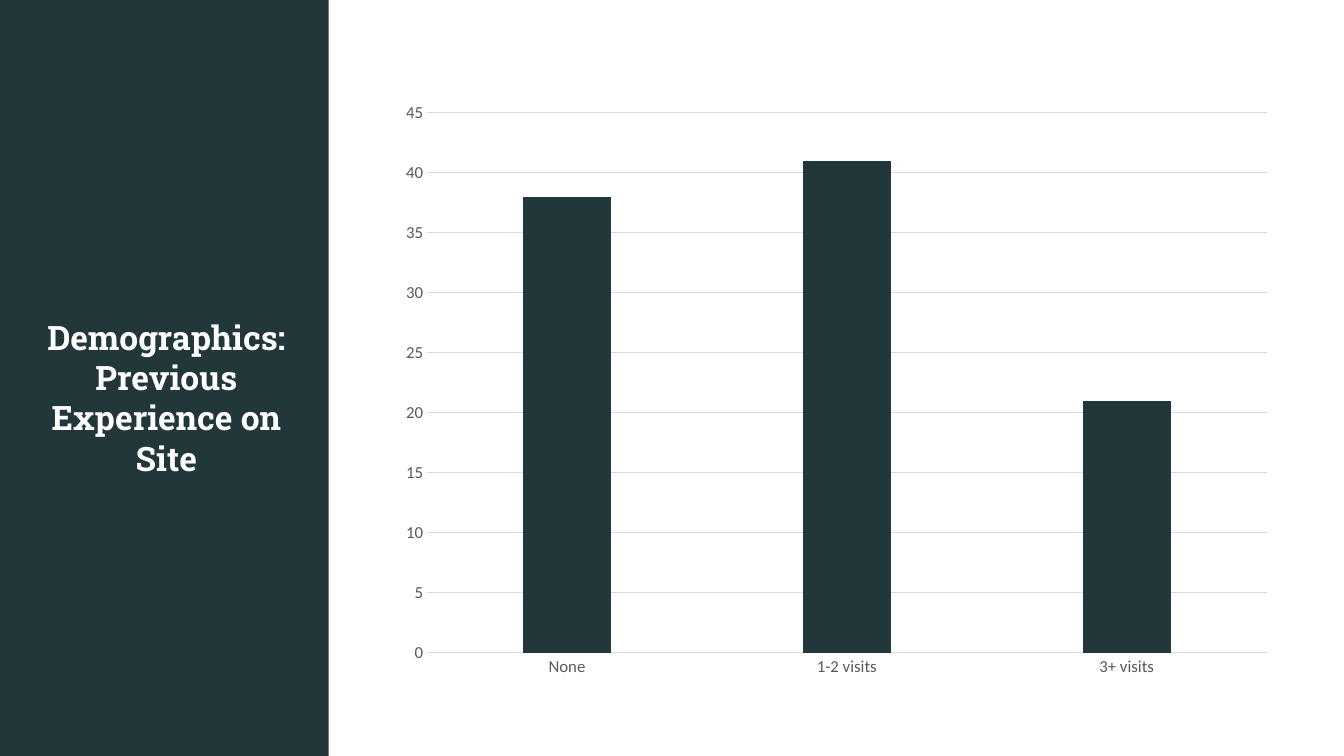
from pptx import Presentation
from pptx.chart.data import CategoryChartData as ChartData
from pptx.dml.color import RGBColor as Rgb
from pptx.enum.chart import XL_CHART_TYPE as Kind, XL_TICK_MARK as Tick
from pptx.enum.shapes import MSO_SHAPE as Shape
from pptx.enum.text import MSO_ANCHOR as Anchor, PP_ALIGN as Align
from pptx.util import Inches, Pt

TITLE = "Demographics: Previous Experience on Site"
VISITS = {"None": 38, "1-2 visits": 41, "3+ visits": 21}
HUES = {"dark": "213739", "white": "FFFFFF", "text": "595959", "grid": "D9D9D9"}
WIDE, HIGH = 13.33, 7.5
PANEL = (3.26, -0.11, 10.08, 7.72)
HEAD = (0.26, 3.09, 2.78, 1.72)
PLOT = (3.85, 0.9, 8.89, 5.93)


def hue(name):
    return Rgb.from_string(HUES[name])


def box(area):
    return [Inches(n) for n in area]


def paint(fill, name):
    fill.solid()
    fill.fore_color.rgb = hue(name)


def style(font, face, size, name, bold=False):
    font.name, font.size, font.bold = face, Pt(size), bold
    font.color.rgb = hue(name)


def rule(line):
    line.color.rgb = hue("grid")
    line.width = Pt(0.75)


def add_panel(slide):
    panel = slide.shapes.add_shape(Shape.RECTANGLE, *box(PANEL))
    panel.shadow.inherit = False
    paint(panel.fill, "white")
    panel.line.fill.background()


def add_title(slide):
    frame = slide.shapes.add_textbox(*box(HEAD)).text_frame
    frame.word_wrap = True
    frame.vertical_anchor = Anchor.TOP
    para = frame.paragraphs[0]
    para.text = TITLE
    para.alignment = Align.CENTER
    style(para.font, "Roboto Slab", 24, "white", True)


def add_bars(slide):
    data = ChartData()
    data.categories = list(VISITS)
    data.add_series("Series 1", list(VISITS.values()))
    chart = slide.shapes.add_chart(Kind.COLUMN_CLUSTERED, *box(PLOT), data).chart
    chart.has_legend = chart.has_title = False
    style(chart.font, "Calibri", 12, "text")
    plot = chart.plots[0]
    plot.gap_width, plot.overlap = 219, -27
    plot.vary_by_categories = False
    paint(plot.series[0].format.fill, "dark")
    cats, vals = chart.category_axis, chart.value_axis
    for axis in (cats, vals):
        axis.major_tick_mark = axis.minor_tick_mark = Tick.NONE
        style(axis.tick_labels.font, "Calibri", 12, "text")
    rule(cats.format.line)
    vals.format.line.fill.background()
    vals.minimum_scale, vals.maximum_scale, vals.major_unit = 0, 45, 5
    rule(vals.major_gridlines.format.line)


def main():
    deck = Presentation()
    deck.slide_width, deck.slide_height = Inches(WIDE), Inches(HIGH)
    slide = deck.slides.add_slide(deck.slide_layouts[6])
    paint(slide.background.fill, "dark")
    add_panel(slide)
    add_title(slide)
    add_bars(slide)
    deck.save("out.pptx")


if __name__ == "__main__":
    main()
